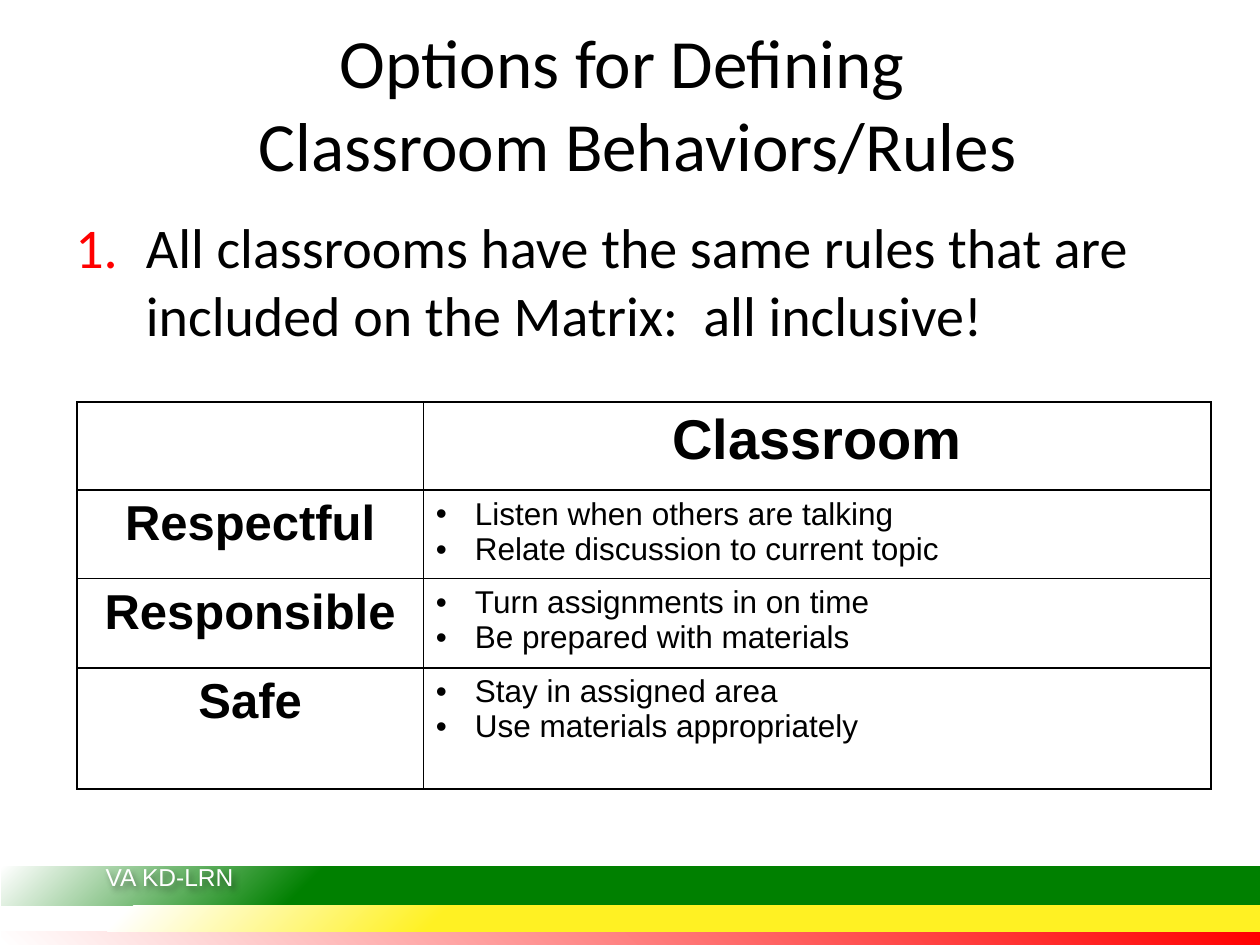
"""Build a slide on defining classroom rules, with an expectations matrix."""
from pptx import Presentation
from pptx import util as u
from pptx.dml.color import RGBColor
from pptx.enum import shapes, text
from pptx.oxml import parse_xml
from pptx.oxml.ns import nsdecls

TITLE = "Options for Defining \n Classroom Behaviors/Rules"
OPTION = "All classrooms have the same rules that are included on the Matrix:  all inclusive!"
FOOTER = "VA KD-LRN"
SETTING = "Classroom"
EXPECTATIONS = [
    ("Respectful", ["Listen when others are talking", "Relate discussion to current topic"]),
    ("Responsible", ["Turn assignments in on time", "Be prepared with materials"]),
    ("Safe", ["Stay in assigned area", "Use materials appropriately"]),
]
COLORS = {"ink": "000000", "paper": "FFFFFF", "red": "FF0000",
          "green": "008000", "yellow": "FFF123"}
TOP_RIGHT = 'l="100000" t="0" r="0" b="100000"'
BOTTOM_RIGHT = 'l="100000" t="100000" r="0" b="0"'
STRIPES = [
    ("red", 7.39, 0.12, (0, 100), TOP_RIGHT),
    ("green", 6.88, 0.31, (75, 100), BOTTOM_RIGHT),
    ("yellow", 7.19, 0.2, (65, 90), BOTTOM_RIGHT),
]
COLUMN_WIDTHS = [2.75, 6.25]
ROW_HEIGHTS = [0.7, 0.69, 0.71, 0.96]
NUMBERED = ['<a:buFont %s typeface="Calibri"/>', '<a:buAutoNum %s type="arabicPeriod"/>']
BULLETED = ['<a:buFont %s typeface="Arial"/>', '<a:buChar %s char="•"/>']


def xml(markup):
    return parse_xml(markup.replace("%s", nsdecls("a"), 1))


def write(frame, lines, size, font="Arial", color="ink", bold=False, align="LEFT",
          bullet=(), bullet_color="ink", indent=0):
    frame.word_wrap = True
    for index, line in enumerate(lines):
        paragraph = frame.paragraphs[0] if index == 0 else frame.add_paragraph()
        paragraph.text = line
        paragraph.alignment = getattr(text.PP_ALIGN, align)
        for run in paragraph.runs:
            run.font.size, run.font.name, run.font.bold = u.Pt(size), font, bold
            run.font.color.rgb = RGBColor.from_string(COLORS[color])
        if bullet:
            props = paragraph._p.get_or_add_pPr()
            props.set("marL", str(u.Inches(indent)))
            props.set("indent", str(-u.Inches(indent)))
            props.append(xml(f'<a:buClr %s><a:srgbClr val="{COLORS[bullet_color]}"/></a:buClr>'))
            for mark in bullet:
                props.append(xml(mark))


def add_text(slide, box, lines, size, anchor="TOP", **style):
    label = slide.shapes.add_textbox(*map(u.Inches, box))
    label.text_frame.vertical_anchor = getattr(text.MSO_ANCHOR, anchor)
    write(label.text_frame, lines, size, **style)
    return label


def add_stripe(slide, color, top, height, stops, focus):
    stripe = slide.shapes.add_shape(shapes.MSO_SHAPE.RECTANGLE, u.Inches(0.01), u.Inches(top),
                                    u.Inches(10), u.Inches(height))
    stripe.shadow.inherit = False
    stripe.line.fill.background()
    stripe.fill.background()
    marks = "".join(f'<a:gs pos="{stop * 1000}"><a:srgbClr val="{COLORS[tint]}"/></a:gs>'
                    for stop, tint in zip(stops, (color, "paper")))
    gradient = xml(f'<a:gradFill %s rotWithShape="1"><a:gsLst>{marks}</a:gsLst>'
                   f'<a:path path="circle"><a:fillToRect {focus}/></a:path></a:gradFill>')
    props = stripe._element.spPr
    props.replace(props.find("{*}noFill"), gradient)


def add_matrix(slide):
    matrix = slide.shapes.add_table(
        len(ROW_HEIGHTS), len(COLUMN_WIDTHS), u.Inches(0.61), u.Inches(3.19),
        u.Inches(sum(COLUMN_WIDTHS)), u.Inches(sum(ROW_HEIGHTS))).table
    matrix.first_row = matrix.horz_banding = False
    for column, width in zip(matrix.columns, COLUMN_WIDTHS):
        column.width = u.Inches(width)
    for row, height in zip(matrix.rows, ROW_HEIGHTS):
        row.height = u.Inches(height)
    for cell in matrix.iter_cells():
        cell.fill.background()
        for position, side in enumerate("LRTB"):
            cell._tc.get_or_add_tcPr().insert(position, xml(
                f'<a:ln{side} %s w="12700"><a:solidFill><a:srgbClr val="{COLORS["ink"]}"/>'
                f'</a:solidFill></a:ln{side}>'))
    write(matrix.cell(0, 1).text_frame, [SETTING], 32, bold=True, align="CENTER")
    for row, (expectation, behaviors) in enumerate(EXPECTATIONS, 1):
        write(matrix.cell(row, 0).text_frame, [expectation], 28, bold=True, align="CENTER")
        write(matrix.cell(row, 1).text_frame, behaviors, 18, bullet=BULLETED, indent=0.31)


def main():
    deck = Presentation()
    deck.slide_width, deck.slide_height = u.Inches(10), u.Inches(7.5)
    slide = deck.slides.add_slide(deck.slide_layouts[6])
    for stripe in STRIPES:
        add_stripe(slide, *stripe)
    footer = add_text(slide, (0.74, 6.79, 1.92, 0.4), [FOOTER], 14, color="paper")
    footer._element.spPr.append(xml(
        '<a:effectLst %s><a:outerShdw blurRad="50800" dist="38100" dir="2700000">'
        f'<a:srgbClr val="{COLORS["ink"]}"><a:alpha val="40000"/></a:srgbClr>'
        '</a:outerShdw></a:effectLst>'))
    add_text(slide, (0.5, 0.3, 9, 1.03), [TITLE], 39.5, anchor="MIDDLE",
             font="Calibri", align="CENTER")
    add_text(slide, (0.5, 1.64, 9, 5.06), [OPTION], 32, font="Calibri",
             bullet=NUMBERED, bullet_color="red", indent=0.56)
    add_matrix(slide)
    deck.save("out.pptx")


if __name__ == "__main__":
    main()
